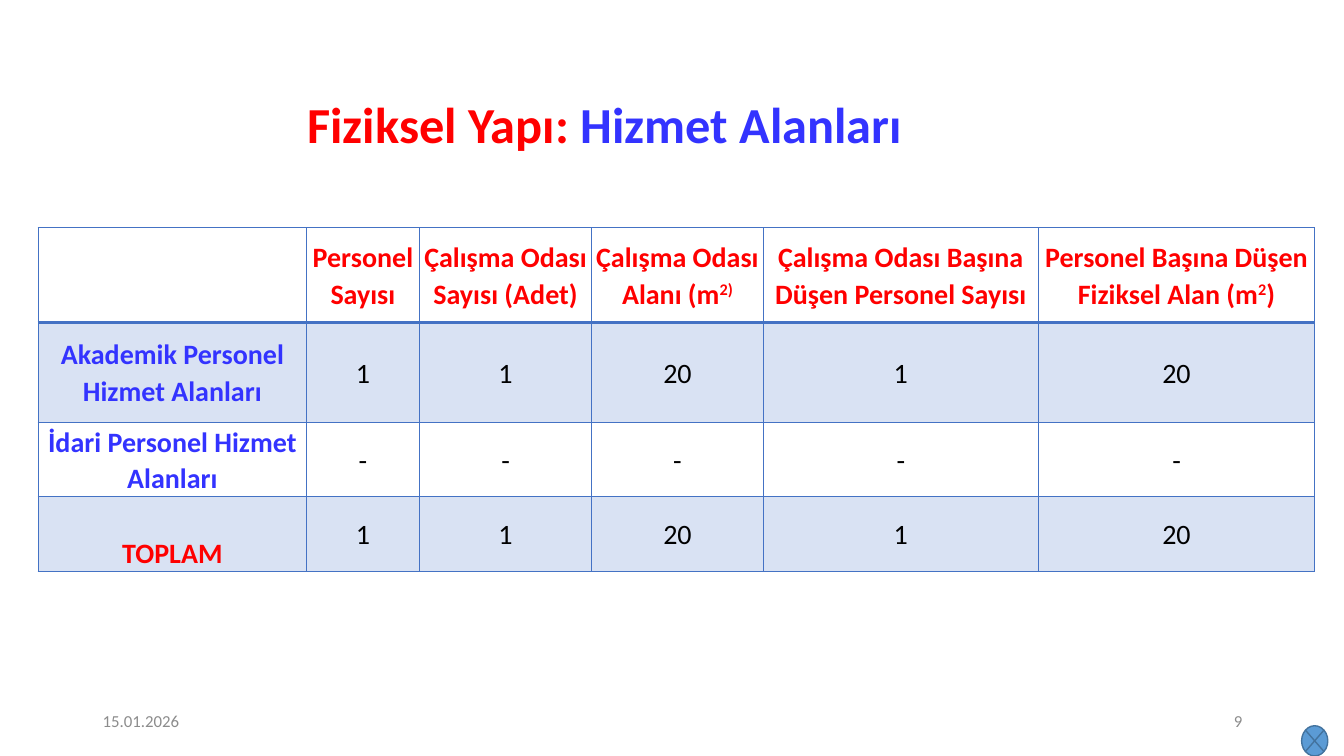
from dataclasses import dataclass
from lxml import etree
from pptx import Presentation
from pptx.dml.color import RGBColor
from pptx.enum.shapes import MSO_SHAPE
from pptx.enum.text import MSO_ANCHOR, PP_ALIGN
from pptx.oxml.ns import qn
from pptx.util import Inches, Pt

CENTER, LEFT, RIGHT = PP_ALIGN.CENTER, PP_ALIGN.LEFT, PP_ALIGN.RIGHT
MIDDLE, BOTTOM = MSO_ANCHOR.MIDDLE, MSO_ANCHOR.BOTTOM
JUNCTION = MSO_SHAPE.FLOWCHART_SUMMING_JUNCTION


@dataclass(frozen=True)
class Theme:
    font: str = "Calibri"
    red: str = "FF0000"
    blue: str = "3333FF"
    black: str = "000000"
    gray: str = "8C8C8C"
    grid: str = "4472C4"
    junction: str = "5B9BD5"
    junction_line: str = "43739E"
    title_size: int = 36
    table_size: int = 20
    footer_size: int = 12


theme = Theme()


def write(paragraph, parts, size, bold, align, spacing=1.0):
    paragraph.alignment = align
    paragraph.line_spacing = spacing
    paragraph.font.name = theme.font
    paragraph.font.size = Pt(size)
    paragraph.font.bold = bold
    for text, color, raised in parts:
        run = paragraph.add_run()
        run.text = text
        run.font.color.rgb = RGBColor.from_string(color)
        if raised:
            run.font._element.set("baseline", "30000")


def add_border(cell, side, width):
    line = etree.SubElement(cell._tc.get_or_add_tcPr(), qn(f"a:{side}"), w=str(Pt(width)))
    fill = etree.SubElement(line, qn("a:solidFill"))
    etree.SubElement(fill, qn("a:srgbClr"), val=theme.grid)


prs = Presentation()
prs.slide_width, prs.slide_height = Inches(13.33), Inches(7.5)
slide = prs.slides.add_slide(prs.slide_layouts[6])

title = [("Fiziksel Yapı: ", theme.red, False), ("Hizmet Alanları", theme.blue, False)]
date = [("15.01.2026", theme.gray, False)]
page = [("9", theme.gray, False)]
for box, parts, size, bold, align, spacing in [
    ((0.38, 0.93, 11.24, 0.67), title, theme.title_size, True, CENTER, 0.9),
    ((0.92, 6.95, 3, 0.4), date, theme.footer_size, False, LEFT, 1.0),
    ((9.42, 6.95, 3, 0.4), page, theme.footer_size, False, RIGHT, 1.0),
]:
    frame = slide.shapes.add_textbox(*map(Inches, box)).text_frame
    frame.word_wrap = True
    frame.vertical_anchor = MIDDLE
    write(frame.paragraphs[0], parts, size, bold, align, spacing)

junction = slide.shapes.add_shape(JUNCTION, Inches(12.91), Inches(7.2), Inches(0.26), Inches(0.3))
junction.shadow.inherit = False
junction.fill.solid()
junction.fill.fore_color.rgb = RGBColor.from_string(theme.junction)
junction.line.color.rgb = RGBColor.from_string(theme.junction_line)
junction.line.width = Pt(1)

headings = [
    [],
    ["Personel Sayısı"],
    ["Çalışma Odası Sayısı (Adet)"],
    ["Çalışma Odası Alanı (m", "2)"],
    ["Çalışma Odası Başına Düşen Personel Sayısı"],
    ["Personel Başına Düşen Fiziksel Alan (m", "2", ")"],
]
areas = [
    ("Akademik Personel Hizmet Alanları", "1", "1", "20", "1", "20"),
    ("İdari Personel Hizmet Alanları", "-", "-", "-", "-", "-"),
    ("TOPLAM", "1", "1", "20", "1", "20"),
]
rows = [headings] + [[[text] for text in area] for area in areas]
column_widths = [2.66, 1.12, 1.71, 1.7, 2.73, 2.74]
row_heights = [0.94, 0.99, 0.74, 0.74]
last = len(rows) - 1

table = slide.shapes.add_table(
    len(rows), len(column_widths), Inches(0.38), Inches(2.26),
    Inches(sum(column_widths)), Inches(sum(row_heights)),
).table
table.first_row = False
table.horz_banding = False
for column, width in zip(table.columns, column_widths):
    column.width = Inches(width)
for row, height in zip(table.rows, row_heights):
    row.height = Inches(height)

for r, row in enumerate(rows):
    for c, texts in enumerate(row):
        cell = table.cell(r, c)
        cell.margin_left = cell.margin_right = cell.margin_top = cell.margin_bottom = 0
        cell.vertical_anchor = BOTTOM if (r, c) == (last, 0) else MIDDLE
        for side, width in [("lnL", 1), ("lnR", 1), ("lnT", 2 if r == 1 else 1), ("lnB", 2 if r == 0 else 1)]:
            add_border(cell, side, width)
        if r % 2:
            cell.fill.solid()
            cell.fill.fore_color.rgb = RGBColor.from_string(theme.grid)
            tint = cell._tc.tcPr.find(f"{qn('a:solidFill')}/{qn('a:srgbClr')}")
            etree.SubElement(tint, qn("a:alpha"), val="20000")
        else:
            cell.fill.background()
        if r == 0 or (r == last and c == 0):
            color = theme.red
        else:
            color = theme.blue if c == 0 else theme.black
        parts = [(text, color, i == 1) for i, text in enumerate(texts)]
        write(cell.text_frame.paragraphs[0], parts, theme.table_size, r == 0 or c == 0, CENTER, 1.07)

prs.save("out.pptx")
